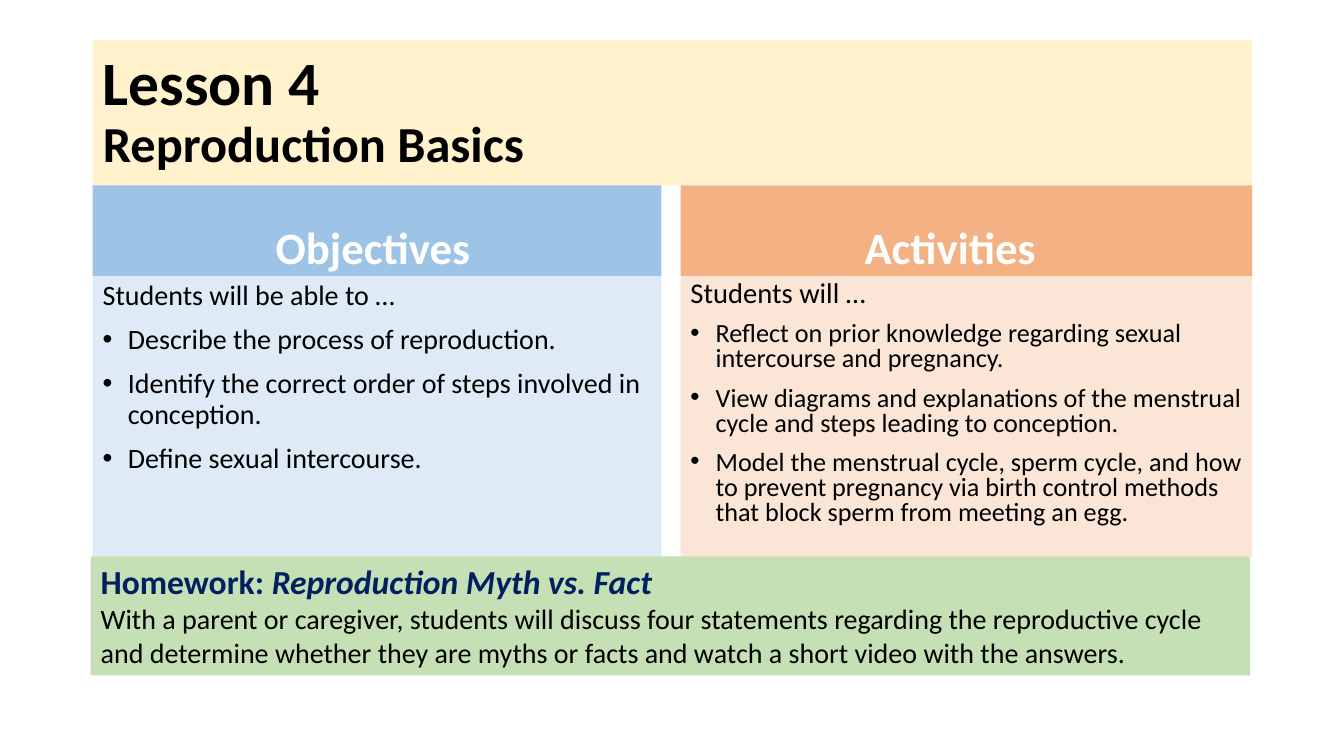
from dataclasses import dataclass

from lxml import etree
from pptx import Presentation
from pptx import util as u
from pptx.dml.color import RGBColor
from pptx.enum import shapes, text
from pptx.oxml import ns


@dataclass(frozen=True)
class Theme:
    font: str = "Calibri"
    black: str = "000000"
    white: str = "FFFFFF"
    navy: str = "002060"
    title_fill: str = "FFF2CC"
    homework_fill: str = "C5E0B4"
    lesson_size: float = 44
    topic_size: float = 36
    heading_size: float = 32
    homework_size: float = 24
    body_size: float = 20


@dataclass(frozen=True)
class Column:
    heading: str
    intro: str
    bullets: tuple
    heading_fill: str
    body_fill: str
    intro_size: float
    bullet_size: float
    line_spacing: float
    heading_inset: float  # right inset that moves the centred heading left


THEME = Theme()
LEFT, TOP, WIDTH = 0.92, 0.4, 11.5
TITLE_HEIGHT, HEADING_HEIGHT, BODY_HEIGHT, HOMEWORK_HEIGHT = 1.44, 0.9, 2.79, 1.18
GUTTER = 0.19
COLUMN_WIDTHS = (5.64, WIDTH - 5.64 - GUTTER)
INDENT = 0.25

COLUMNS = (
    Column("Objectives", "Students will be able to …",
           ("Describe the process of reproduction.",
            "Identify the correct order of steps involved in conception.",
            "Define sexual intercourse."),
           "9DC3E6", "DEEBF7", 20, 20, 0.9, 0.18),
    Column("Activities", "Students will …",
           ("Reflect on prior knowledge regarding sexual intercourse and pregnancy.",
            "View diagrams and explanations of the menstrual cycle and steps "
            "leading to conception.",
            "Model the menstrual cycle, sperm cycle, and how to prevent pregnancy "
            "via birth control methods that block sperm from meeting an egg."),
           "F4B183", "FBE5D6", 20.4, 18.7, 0.8, 0.42),
)


def style_run(run, size, color=THEME.black, bold=False, italic=False):
    font = run.font
    font.name, font.size = THEME.font, u.Pt(size)
    font.bold, font.italic = bold, italic
    font.color.rgb = RGBColor.from_string(color)


def fill_panel(shape, color, anchor):
    shape.fill.solid()
    shape.fill.fore_color.rgb = RGBColor.from_string(color)
    shape.line.fill.background()
    frame = shape.text_frame
    frame.word_wrap = True
    frame.auto_size = text.MSO_AUTO_SIZE.NONE
    frame.vertical_anchor = anchor
    return frame


def add_panel(slide, box, color, anchor=text.MSO_ANCHOR.TOP):
    shape = slide.shapes.add_shape(shapes.MSO_SHAPE.RECTANGLE, *map(u.Inches, box))
    shape.shadow.inherit = False
    return fill_panel(shape, color, anchor)


def add_bullet(paragraph):
    properties = paragraph._p.get_or_add_pPr()
    properties.set("marL", str(u.Inches(INDENT)))
    properties.set("indent", str(-u.Inches(INDENT)))
    etree.SubElement(properties, ns.qn("a:buFont")).set("typeface", "Arial")
    etree.SubElement(properties, ns.qn("a:buChar")).set("char", "•")


def place_title(slide, box):
    title = slide.shapes.title
    title.left, title.top, title.width, title.height = map(u.Inches, box)
    frame = fill_panel(title, THEME.title_fill, text.MSO_ANCHOR.MIDDLE)
    frame.text = "Lesson 4\vReproduction Basics"
    paragraph = frame.paragraphs[0]
    paragraph.alignment = text.PP_ALIGN.LEFT
    paragraph.line_spacing = 0.9
    for run, size in zip(paragraph.runs, (THEME.lesson_size, THEME.topic_size)):
        style_run(run, size, bold=True)


def add_column(slide, box, column):
    left, top, width, height = box

    # Heading band
    frame = add_panel(slide, (left, top, width, HEADING_HEIGHT),
                      column.heading_fill, text.MSO_ANCHOR.BOTTOM)
    frame.margin_right = u.Inches(column.heading_inset)
    frame.margin_bottom = u.Inches(0.03)
    frame.text = column.heading
    paragraph = frame.paragraphs[0]
    paragraph.alignment = text.PP_ALIGN.CENTER
    style_run(paragraph.runs[0], THEME.heading_size, THEME.white, bold=True)

    # Introductory line and bullets
    frame = add_panel(slide, (left, top + HEADING_HEIGHT, width, height - HEADING_HEIGHT),
                      column.body_fill)
    frame.text = "\n".join((column.intro, *column.bullets))
    for index, paragraph in enumerate(frame.paragraphs):
        paragraph.alignment = text.PP_ALIGN.LEFT
        paragraph.line_spacing = column.line_spacing
        paragraph.space_before = u.Pt(10)
        if index:
            add_bullet(paragraph)
        style_run(paragraph.runs[0], column.bullet_size if index else column.intro_size)


def add_homework(slide, box):
    frame = add_panel(slide, box, THEME.homework_fill)
    frame.text = ("Homework: \nWith a parent or caregiver, students will discuss four "
                  "statements regarding the reproductive cycle and determine whether they "
                  "are myths or facts and watch a short video with the answers.")
    heading, details = frame.paragraphs
    heading.add_run().text = "Reproduction Myth vs. Fact"
    for run, italic in zip(heading.runs, (False, True)):
        style_run(run, THEME.homework_size, THEME.navy, bold=True, italic=italic)
    style_run(details.runs[0], THEME.body_size)
    for paragraph in frame.paragraphs:
        paragraph.alignment = text.PP_ALIGN.LEFT


def main():
    presentation = Presentation()
    presentation.slide_width, presentation.slide_height = u.Inches(13.33), u.Inches(7.5)
    slide = presentation.slides.add_slide(presentation.slide_layouts[5])

    place_title(slide, (LEFT, TOP, WIDTH, TITLE_HEIGHT))

    # Two columns side by side
    left, top = LEFT, TOP + TITLE_HEIGHT
    column_height = HEADING_HEIGHT + BODY_HEIGHT
    for column, width in zip(COLUMNS, COLUMN_WIDTHS):
        add_column(slide, (left, top, width, column_height), column)
        left += width + GUTTER

    # Homework band, slightly left of the columns
    add_homework(slide, (LEFT - 0.02, top + column_height - 0.01, WIDTH, HOMEWORK_HEIGHT))
    presentation.save("out.pptx")


if __name__ == "__main__":
    main()
